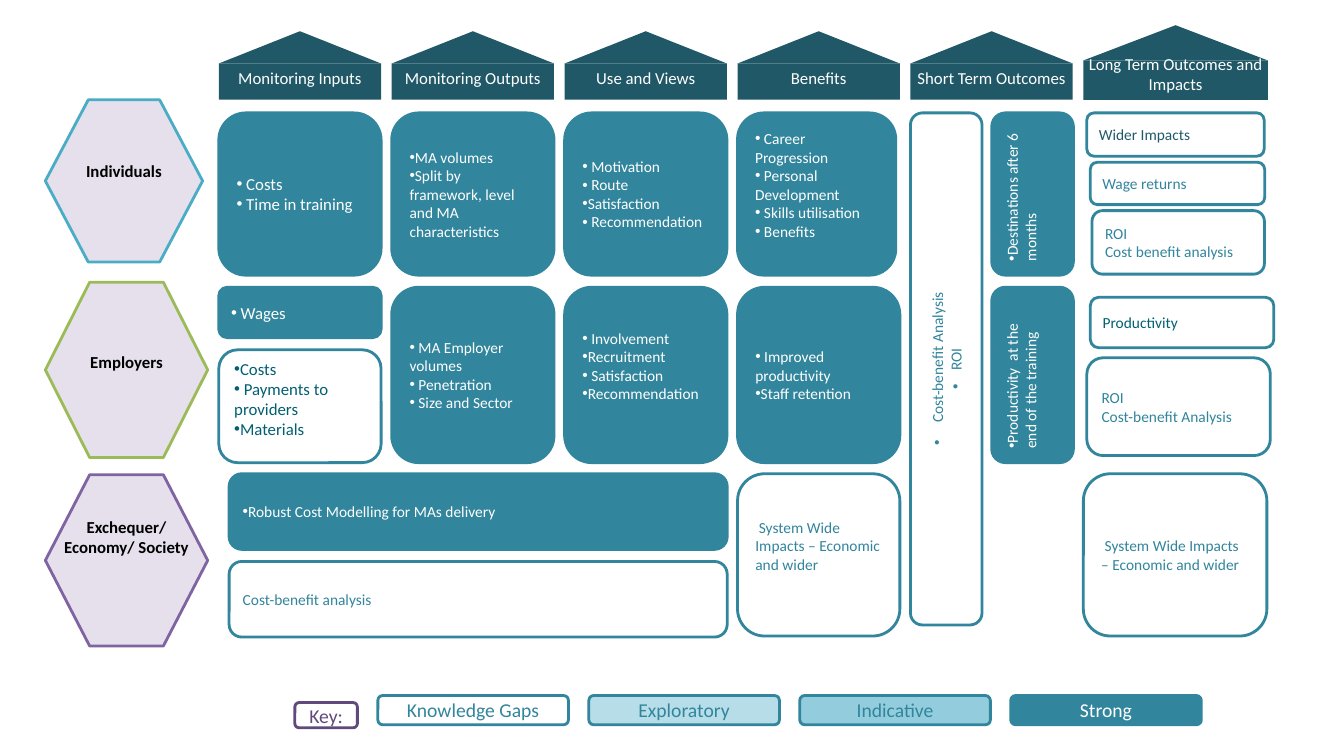
from lxml.etree import SubElement
from pptx import Presentation
from pptx.dml.color import RGBColor
from pptx.enum.shapes import MSO_SHAPE as Shape
from pptx.enum.text import MSO_ANCHOR as Anchor, PP_ALIGN as Align
from pptx.oxml.ns import qn
from pptx.util import Emu, Inches, Pt

FONT = "Calibri"
TEAL, DARK, INK, WHITE, PURPLE = "31859C", "205867", "006072", "FFFFFF", "604A7B"
# Column grid, and the three bands of the matrix
FIRST, PITCH, WIDTH = 2.17, 1.715, 1.61
INDIVIDUALS, EMPLOYERS, SOCIETY = 1.12, 2.85, 4.7
BLANK_LINE = 0.18

HEADERS = ["Monitoring Inputs", "Monitoring Outputs", "Use and Views", "Benefits",
           "Short Term Outcomes"]

# Hexagons: top, width, height, line colour, label top, label
GROUPS = [
    (0.99, 1.56, 1.61, "4BACC6", 1.55, "Individuals"),
    (2.8, 1.61, 1.74, "9BBB59", 3.44, "Employers"),
    (4.71, 1.61, 1.7, "8064A2", 5.08, "Exchequer/ Economy/ Society"),
]

# Filled boxes: column, top, width, height, bullets, format
STRONG = [
    (0, INDIVIDUALS, WIDTH, 1.61, [" Costs", " Time in training"], {"size": 12}),
    (1, INDIVIDUALS, WIDTH, 1.61,
     ["MA volumes", "Split by framework, level and MA characteristics"], {}),
    (2, INDIVIDUALS, WIDTH, 1.61,
     [" Motivation", " Route", "Satisfaction", " Recommendation"], {}),
    (3, INDIVIDUALS, 1.57, 1.61,
     [" Career Progression", " Personal Development", " Skills utilisation", " Benefits"],
     {"lift": BLANK_LINE}),
    (4.47, INDIVIDUALS, 0.81, 1.61, ["Destinations after 6 months"],
     {"upright": True, "lift": BLANK_LINE}),
    (0, EMPLOYERS, WIDTH, 0.5, [" Wages"], {"size": 12}),
    (1, EMPLOYERS, WIDTH, 1.74,
     [" MA Employer volumes", " Penetration", " Size and Sector"], {}),
    (2, EMPLOYERS, WIDTH, 1.74,
     [" Involvement", "Recruitment", " Satisfaction", "Recommendation"],
     {"lift": BLANK_LINE}),
    (3, EMPLOYERS, WIDTH, 1.74, [" Improved productivity", "Staff retention"], {}),
    (4.47, EMPLOYERS, 0.81, 1.74, ["Productivity  at the end of the training"],
     {"upright": True, "lift": BLANK_LINE}),
    (0.06, SOCIETY, 4.94, 0.75, ["Robust Cost Modelling for MAs delivery"], {}),
]

# Outlined boxes, same fields
GAPS = [
    (0, 3.47, WIDTH, 1.12, ["Costs", " Payments to providers", "Materials"],
     {"size": 12, "colour": INK, "bullets": True, "lift": 0.15}),
    (0.06, 5.57, 4.94, 0.75, ["Cost-benefit analysis"], {}),
    (3, SOCIETY, WIDTH, 1.61, [" System Wide Impacts – Economic and wider"],
     {"lift": BLANK_LINE}),
    (4, INDIVIDUALS, 0.71, 5.08, [" Cost-benefit Analysis", "ROI"],
     {"upright": True, "bullets": True, "indent": 0.19, "align": Align.CENTER}),
    (5.02, INDIVIDUALS, 1.76, 0.43, ["Wider Impacts"], {"colour": "215968"}),
    (5.04, 1.61, 1.73, 0.42, ["Wage returns"], {}),
    (5.05, 2.09, 1.71, 0.63, ["ROI", "Cost benefit analysis"], {}),
    (5.04, 2.95, 1.82, 0.5, ["Productivity"], {"colour": INK}),
    (5.02, 3.55, 1.82, 0.97, ["ROI", "Cost-benefit Analysis"], {}),
    (5, SOCIETY, 1.82, 1.61, [" System Wide Impacts – Economic and wider"], {}),
]

KEY = [("Knowledge Gaps", WHITE, TEAL), ("Exploratory", "B7DEE8", TEAL),
       ("Indicative", "93CDDD", TEAL), ("Strong", TEAL, WHITE)]


def rgb(value):
    return RGBColor.from_string(value)


def left_of(column):
    return FIRST + PITCH * column


def write(frame, lines, size, colour, align=Align.CENTER, bold=False,
          bullets=False, indent=0):
    frame.word_wrap = True
    for index, line in enumerate(lines):
        para = frame.paragraphs[0] if index == 0 else frame.add_paragraph()
        para.alignment = align
        span = para.add_run()
        span.text = line
        for name, value in {"name": FONT, "size": Pt(size), "bold": bold}.items():
            setattr(span.font, name, value)
        span.font.color.rgb = rgb(colour)
        if bullets:
            settings = para._p.get_or_add_pPr()
            settings.set("marL", str(Inches(indent)))
            settings.set("indent", str(-Inches(indent)))
            SubElement(settings, qn("a:buFont"), typeface="Arial")
            SubElement(settings, qn("a:buChar"), char="•")


def draw(page, kind, left, top, width, height, fill=None, line=None):
    shape = page.shapes.add_shape(kind, *map(Inches, (left, top, width, height)))
    shape.shadow.inherit = False
    for part, colour in ((shape.fill, fill), (shape.line.fill, line)):
        if colour:
            part.solid()
            part.fore_color.rgb = rgb(colour)
        else:
            part.background()
    if line:
        shape.line.width = Pt(2)
    return shape


def label(page, left, top, width, height, text, colour, bold=False):
    area = page.shapes.add_textbox(*map(Inches, (left, top, width, height)))
    write(area.text_frame, [text], 12, colour, bold=bold)


def box(page, column, top, width, height, lines, fill=None, line=TEAL,
        colour=TEAL, size=11, align=Align.LEFT, upright=False, lift=0, **style):
    shape = draw(page, Shape.ROUNDED_RECTANGLE, left_of(column), top, width, height,
                 fill, line)
    frame = shape.text_frame
    frame.vertical_anchor = Anchor.MIDDLE
    if upright:
        frame._txBody.bodyPr.set("vert", "vert270")
    # A wider margin after the text moves it off centre
    side = "margin_right" if upright else "margin_bottom"
    if lift:
        setattr(frame, side, Emu(getattr(frame, side) + Inches(lift)))
    write(frame, lines, size, colour, align, **style)


def header(page, column, text, width=WIDTH, roof=0.31, eaves=0.63, text_top=0.62):
    left = left_of(column)
    draw(page, Shape.RECTANGLE, left, eaves, width, 0.99 - eaves, DARK)
    draw(page, Shape.ISOSCELES_TRIANGLE, left, roof, width, eaves - roof, DARK)
    label(page, left - 0.08, text_top, width + 0.16, 0.3, text, WHITE)


def group(page, top, width, height, line, label_top, text):
    hexagon = draw(page, Shape.HEXAGON, 0.45, top, width, height, "E6E0EC", line)
    hexagon.adjustments[0] = 0.273
    label(page, 0.42 + (width - WIDTH) / 2, label_top, 1.67, 0.5, text, "000000", True)


def main():
    deck = Presentation()
    deck.slide_width, deck.slide_height = Inches(13.33), Inches(7.5)
    page = deck.slides.add_slide(deck.slide_layouts[6])

    # Row groups and column headers
    for fields in GROUPS:
        group(page, *fields)
    for column, text in enumerate(HEADERS):
        header(page, column, text)
    header(page, 5, "Long Term Outcomes and Impacts", 1.83, 0.25, 0.6, 0.48)

    # Evidence matrix
    for *fields, style in STRONG:
        box(page, *fields, fill=TEAL, colour=WHITE, bullets=True, **style)
    for *fields, style in GAPS:
        box(page, *fields, **style)

    # Key
    box(page, 0.44, 6.97, 0.62, 0.25, ["Key:"], WHITE, PURPLE, PURPLE, 14, Align.CENTER)
    for index, (text, fill, colour) in enumerate(KEY):
        box(page, 0.92 + 1.22 * index, 6.9, 1.89, 0.29, [text], fill, TEAL, colour, 14,
            Align.CENTER)

    deck.save("out.pptx")


if __name__ == "__main__":
    main()
